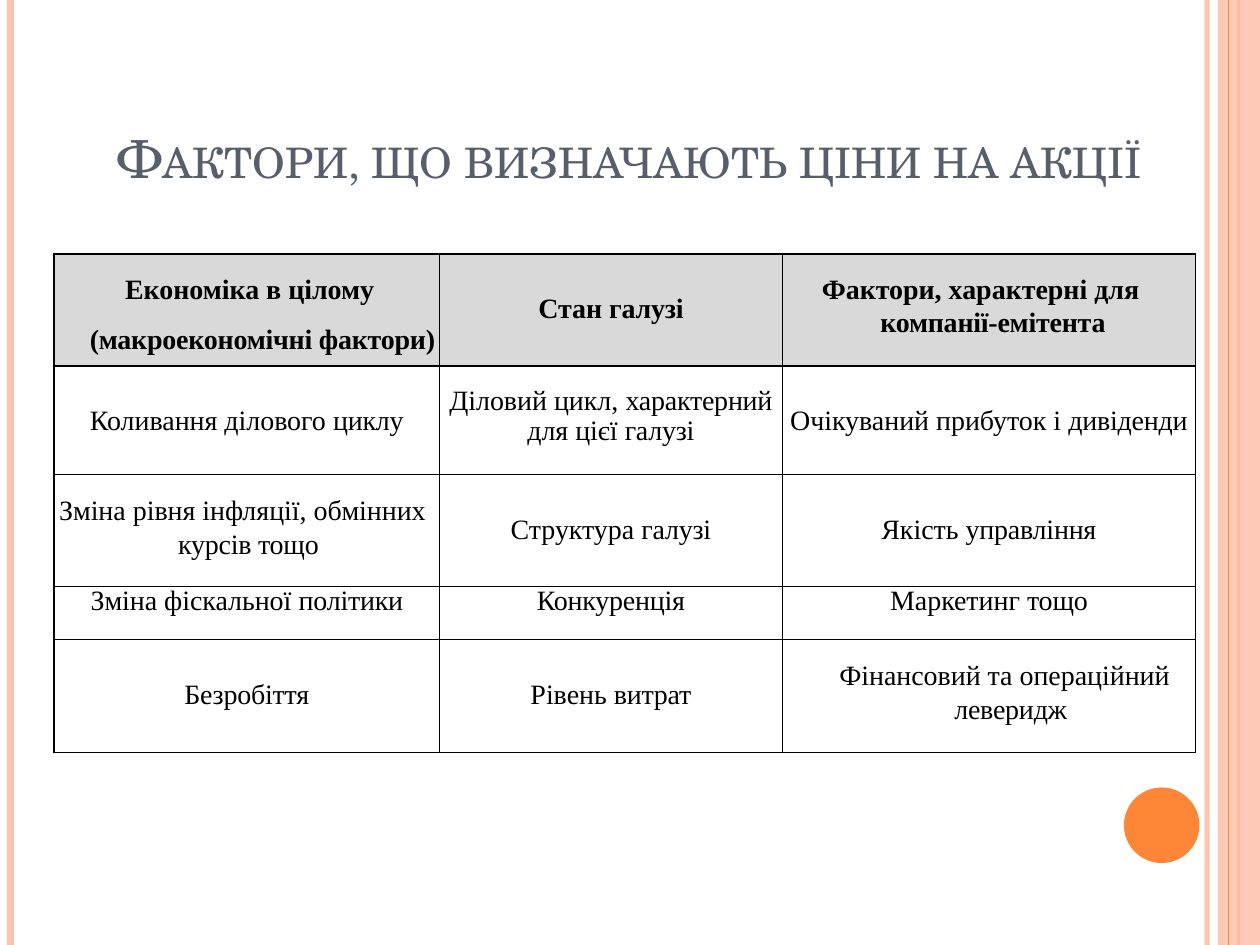
from dataclasses import dataclass

from lxml import etree
from pptx import Presentation
from pptx.dml.color import RGBColor
from pptx.enum.shapes import MSO_CONNECTOR, MSO_SHAPE
from pptx.enum.text import MSO_ANCHOR, PP_ALIGN
from pptx.oxml.ns import qn
from pptx.util import Pt

STRAIGHT = MSO_CONNECTOR.STRAIGHT
RECTANGLE, OVAL = MSO_SHAPE.RECTANGLE, MSO_SHAPE.OVAL
TOP, BOTTOM = MSO_ANCHOR.TOP, MSO_ANCHOR.BOTTOM
LEFT, CENTER = PP_ALIGN.LEFT, PP_ALIGN.CENTER
WIDTH, HEIGHT = 720, 540


@dataclass(frozen=True)
class Theme:
    peach: str = "FEC3AE"
    orange: str = "FE8637"
    title: str = "575F6D"
    text: str = "000000"
    header: str = "D9D9D9"
    border: str = "000000"
    title_font: str = "TeX Gyre Schola"
    body_font: str = "Times New Roman"
    title_size: float = 30
    body_size: float = 16
    tight: float = -0.1


@dataclass(frozen=True)
class Cell:
    lines: tuple
    top: float = 22
    pitch: float = 18.4
    indents: tuple = ()


THEME = Theme()
COLUMNS = (220.32, 195.84, 236.16)
ROWS = (64, 62, 64, 30.4, 64.4)
CELLS = (
    (
        Cell(("Економіка в цілому", "(макроекономічні фактори)"), 0.6, 28.7, (40.6, 20.4)),
        Cell(("Стан галузі",)),
        Cell(("Фактори, характерні для", "компанії-емітента"), 10.5, 18.9, (22.6, 56)),
    ),
    (
        Cell(("Коливання ділового циклу",)),
        Cell(("Діловий цикл, характерний", "для цієї галузі"), 12.1, 17.1),
        Cell(("Очікуваний прибуток і дивіденди",)),
    ),
    (
        Cell(("Зміна рівня інфляції, обмінних", "курсів тощо"), 10.7, 19.1, (2.9, 70.9)),
        Cell(("Структура галузі",)),
        Cell(("Якість управління",)),
    ),
    (
        Cell(("Зміна фіскальної політики",), 0, 17),
        Cell(("Конкуренція",), 0, 17),
        Cell(("Маркетинг тощо",), 0, 17),
    ),
    (
        Cell(("Безробіття",)),
        Cell(("Рівень витрат",)),
        Cell(("Фінансовий та операційний", "леверидж"), 10.7, 19.1, (32.6, 98.3)),
    ),
)


def rgb(color):
    return RGBColor.from_string(color)


def set_opacity(element, percent):
    for color in element.iter(qn("a:srgbClr")):
        etree.SubElement(color, qn("a:alpha")).set("val", str(percent * 1000))


def add_stripe(slide, x, color, width, opacity=100):
    line = slide.shapes.add_connector(STRAIGHT, Pt(x), Pt(0), Pt(x), Pt(HEIGHT))
    line.line.color.rgb = rgb(color)
    line.line.width = Pt(width)
    properties = line._element.spPr
    etree.SubElement(properties, qn("a:effectLst"))
    if opacity < 100:
        set_opacity(properties, opacity)


def add_solid(slide, kind, box, color, opacity=100):
    shape = slide.shapes.add_shape(kind, *map(Pt, box))
    shape.shadow.inherit = False
    shape.fill.solid()
    shape.fill.fore_color.rgb = rgb(color)
    shape.line.fill.background()
    if opacity < 100:
        set_opacity(shape._element.spPr, opacity)


def add_run(paragraph, text, font, size, color, bold=False):
    run = paragraph.add_run()
    run.text = text
    run.font.name = font
    run.font.size = Pt(size)
    run.font.color.rgb = rgb(color)
    run.font.bold = bold
    return run


def add_title(slide, text, box):
    shape = slide.shapes.add_textbox(*map(Pt, box))
    frame = shape.text_frame
    frame.word_wrap = True
    frame.vertical_anchor = BOTTOM
    paragraph = frame.paragraphs[0]
    paragraph.alignment = CENTER
    run = add_run(paragraph, text, THEME.title_font, THEME.title_size, THEME.title)
    run.font._element.set("cap", "small")


def add_borders(table_cell):
    properties = table_cell._tc.get_or_add_tcPr()
    for position, side in enumerate(("lnL", "lnR", "lnT", "lnB")):
        line = etree.Element(qn(f"a:{side}"), w=str(Pt(1)))
        fill = etree.SubElement(line, qn("a:solidFill"))
        etree.SubElement(fill, qn("a:srgbClr")).set("val", THEME.border)
        properties.insert(position, line)


def split_line(text, index, indented):
    if indented:
        return ("", text) if index else (text, "")
    start, space, last_word = text.rpartition(" ")
    return start + space, last_word


def add_cell_line(paragraph, parts, bold):
    for text, spacing in zip(parts, (0, THEME.tight)):
        if text:
            run = add_run(paragraph, text, THEME.body_font, THEME.body_size, THEME.text, bold)
            run.font._element.set("spc", str(round(spacing * 100)))


def fill_cell(table_cell, content, is_header):
    table_cell.margin_left = table_cell.margin_right = table_cell.margin_bottom = 0
    table_cell.margin_top = Pt(content.top)
    table_cell.vertical_anchor = TOP
    if is_header:
        table_cell.fill.solid()
        table_cell.fill.fore_color.rgb = rgb(THEME.header)
    else:
        table_cell.fill.background()
    add_borders(table_cell)
    frame = table_cell.text_frame
    indented = bool(content.indents)
    for index, text in enumerate(content.lines):
        paragraph = frame.add_paragraph() if index else frame.paragraphs[0]
        paragraph.line_spacing = Pt(content.pitch)
        paragraph.alignment = LEFT if indented else CENTER
        if indented:
            paragraph._p.get_or_add_pPr().set("marL", str(Pt(content.indents[index])))
        add_cell_line(paragraph, split_line(text, index, indented), is_header)


def add_factor_table(slide, left, top):
    frame = slide.shapes.add_table(
        len(ROWS), len(COLUMNS), Pt(left), Pt(top), Pt(sum(COLUMNS)), Pt(sum(ROWS))
    )
    table = frame.table
    table.first_row = table.horz_banding = False
    for column, width in zip(table.columns, COLUMNS):
        column.width = Pt(width)
    for row_index, (row, height) in enumerate(zip(table.rows, ROWS)):
        row.height = Pt(height)
        for table_cell, content in zip(row.cells, CELLS[row_index]):
            fill_cell(table_cell, content, row_index == 0)


def main():
    presentation = Presentation()
    presentation.slide_width, presentation.slide_height = Pt(WIDTH), Pt(HEIGHT)
    slide = presentation.slides.add_slide(presentation.slide_layouts[6])
    add_stripe(slide, 689.76, THEME.peach, 3, 93)
    add_stripe(slide, 6, THEME.peach, 4.5)
    add_stripe(slide, 707.76, THEME.orange, 1.5)
    add_solid(slide, RECTANGLE, (696, 0, 24, HEIGHT), THEME.peach, 87)
    add_stripe(slide, 702, THEME.orange, 0.75)
    add_solid(slide, OVAL, (642.24, 450, 43.2, 43.2), THEME.orange)
    add_title(slide, "Фактори, що визначають ціни на акції", (36, 21.6, 647.28, 90))
    add_factor_table(slide, 30.9, 145.2)
    presentation.save("out.pptx")


if __name__ == "__main__":
    main()
